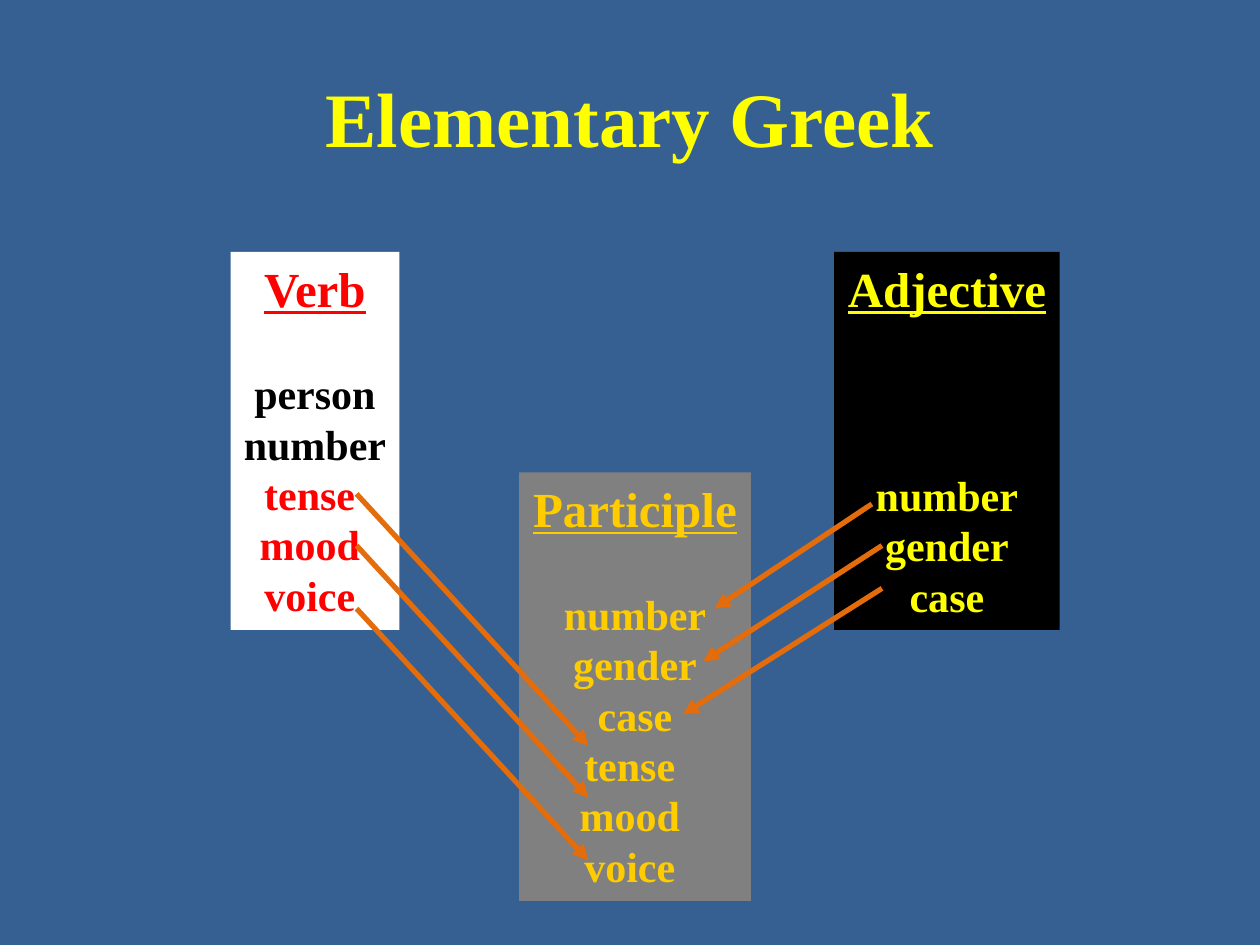
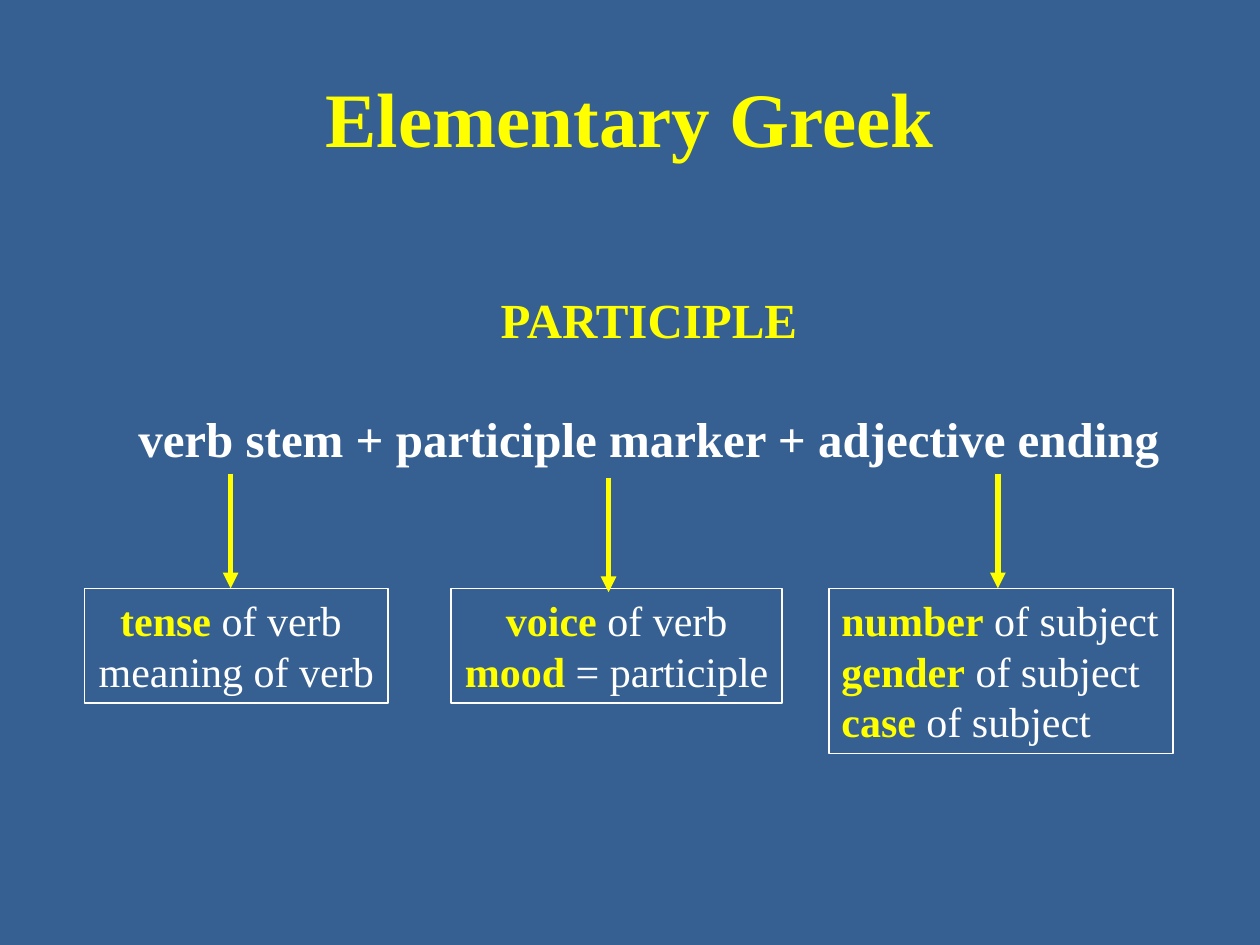
import pptx
import pptx.util
import pptx.dml.color
import pptx.enum.shapes
import pptx.enum.text
import pptx.oxml.ns
import lxml.etree

RGB = pptx.dml.color.RGBColor
ALIGN = pptx.enum.text.PP_ALIGN
BLUE = RGB(0x37, 0x60, 0x92)
YELLOW = RGB(0xFF, 0xFF, 0x00)
GOLD = RGB(0xFF, 0xCC, 0x00)
RED = RGB(0xFF, 0x00, 0x00)
ORANGE = RGB(0xE4, 0x6C, 0x0A)
GREY = RGB(0x80, 0x80, 0x80)
WHITE = RGB(0xFF, 0xFF, 0xFF)
BLACK = RGB(0x00, 0x00, 0x00)
FONT = "Times New Roman"
PX = 9144


def px(*lengths):
    return [pptx.util.Emu(n * PX) for n in lengths]


def add_run(p, text, size=24, color=WHITE, bold=False, underline=False):
    r = p.add_run()
    r.text = text
    f = r.font
    f.name, f.size, f.bold, f.underline = FONT, pptx.util.Pt(size), bold, underline
    f.color.rgb = color


class Deck:
    def __init__(self):
        self.prs = pptx.Presentation()
        self.prs.slide_width, self.prs.slide_height = px(1000, 750)
        fill = self.prs.slide_master.background.fill
        fill.solid()
        fill.fore_color.rgb = BLUE

    def slide(self, title):
        self.s = self.prs.slides.add_slide(self.prs.slide_layouts[5])
        sp = self.s.shapes.title
        sp.left, sp.top, sp.width, sp.height = px(50, 30, 900, 125)
        tf = sp.text_frame
        tf.vertical_anchor = pptx.enum.text.MSO_ANCHOR.MIDDLE
        p = tf.paragraphs[0]
        p.alignment = ALIGN.CENTER
        add_run(p, title, size=44, color=YELLOW, bold=True)

    def set_lines(self, sp, lines, gaps, align=ALIGN.CENTER):
        tf = sp.text_frame
        tf.word_wrap = False
        tf.vertical_anchor = pptx.enum.text.MSO_ANCHOR.TOP
        for i, runs in enumerate(lines):
            p = tf.paragraphs[0] if i == 0 else tf.add_paragraph()
            p.alignment = align
            p.space_before = pptx.util.Pt(gaps.get(i, 0))
            for text, style in runs:
                add_run(p, text, **style)

    def text(self, box, lines, gaps):
        self.set_lines(self.s.shapes.add_textbox(*px(*box)), lines, gaps)

    def box(self, box, lines, gaps={}, fill=None, line=None, align=ALIGN.CENTER):
        sp = self.s.shapes.add_shape(pptx.enum.shapes.MSO_SHAPE.RECTANGLE, *px(*box))
        sp.shadow.inherit = False
        for part, color in ((sp.fill, fill), (sp.line.fill, line)):
            if color is None:
                part.background()
            else:
                part.solid()
                part.fore_color.rgb = color
        if line is not None:
            sp.line.width = pptx.util.Pt(1)
        self.set_lines(sp, lines, gaps, align)

    def arrow(self, start, end, color):
        c = self.s.shapes.add_connector(
            pptx.enum.shapes.MSO_CONNECTOR.STRAIGHT, *px(*start, *end))
        c.line.color.rgb = color
        c.line.width = pptx.util.Pt(3)
        qn = pptx.oxml.ns.qn
        spPr = c._element.spPr
        lxml.etree.SubElement(spPr.get_or_add_ln(), qn("a:tailEnd"), type="triangle")
        lxml.etree.SubElement(spPr, qn("a:effectLst"))


def word_list(heading, color, words):
    lines = [[(heading, dict(size=28, color=color, bold=True, underline=True))]]
    return lines + [[(w, dict(color=c, bold=True))] for w, c in words]


def term_line(term, rest):
    return [(term, dict(color=YELLOW, bold=True)), (rest, {})]


def comparison(deck):
    deck.slide("Elementary Greek")
    verbal = ["tense ", "mood ", "voice "]
    nominal = ["number", "gender", "case"]
    verb = [(w, BLACK) for w in ("person", "number")] + [(w, RED) for w in verbal]
    deck.box((183, 200, 134, 300), word_list("Verb", RED, verb), {1: 29}, fill=WHITE)
    deck.box((662, 200, 179, 300),
             word_list("Adjective", YELLOW, [(w, YELLOW) for w in nominal]),
             {1: 87}, fill=BLACK)
    deck.box((412, 375, 184, 340),
             word_list("Participle", GOLD, [(w, GOLD) for w in nominal + verbal]),
             {1: 29}, fill=GREY)
    for start, end in (((692, 400), (567, 483)), ((700, 433), (558, 525)),
                       ((700, 467), (542, 567))):
        deck.arrow(start, end, ORANGE)
    for y in (392, 433, 483):
        deck.arrow((283, y), (467, y + 200), ORANGE)


def formation(deck):
    deck.slide("Elementary Greek")
    big = dict(size=28, bold=True)
    deck.text((95, 225, 840, 151),
              [[("PARTICIPLE", dict(big, color=YELLOW))],
               [("verb stem + participle marker + adjective ending", big)]], {1: 34})
    deck.box((67, 467, 241, 91),
             [term_line("tense", " of verb "), [("meaning of verb", {})]], line=WHITE)
    deck.box((358, 467, 263, 91),
             [term_line("voice ", "of verb"), term_line("mood", " = participle")],
             line=WHITE)
    deck.box((658, 467, 273, 131),
             [term_line(w, " of subject") for w in ("number", "gender", "case")],
             line=WHITE, align=ALIGN.LEFT)
    for x, y in ((183, 376), (483, 379), (792, 376)):
        deck.arrow((x, y), (x, y + 91), YELLOW)


def main():
    deck = Deck()
    comparison(deck)
    formation(deck)
    deck.prs.save("out.pptx")


if __name__ == "__main__":
    main()
